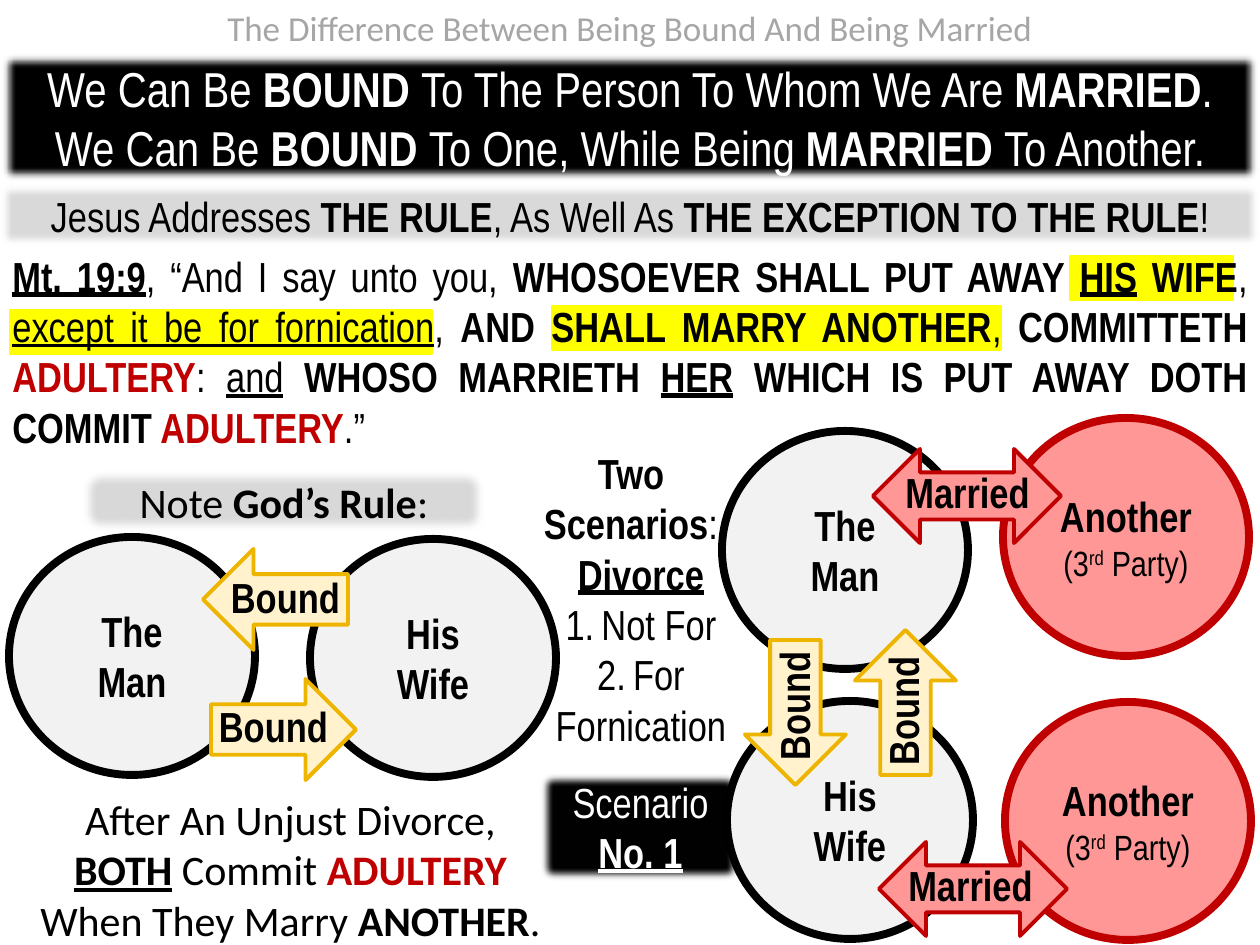
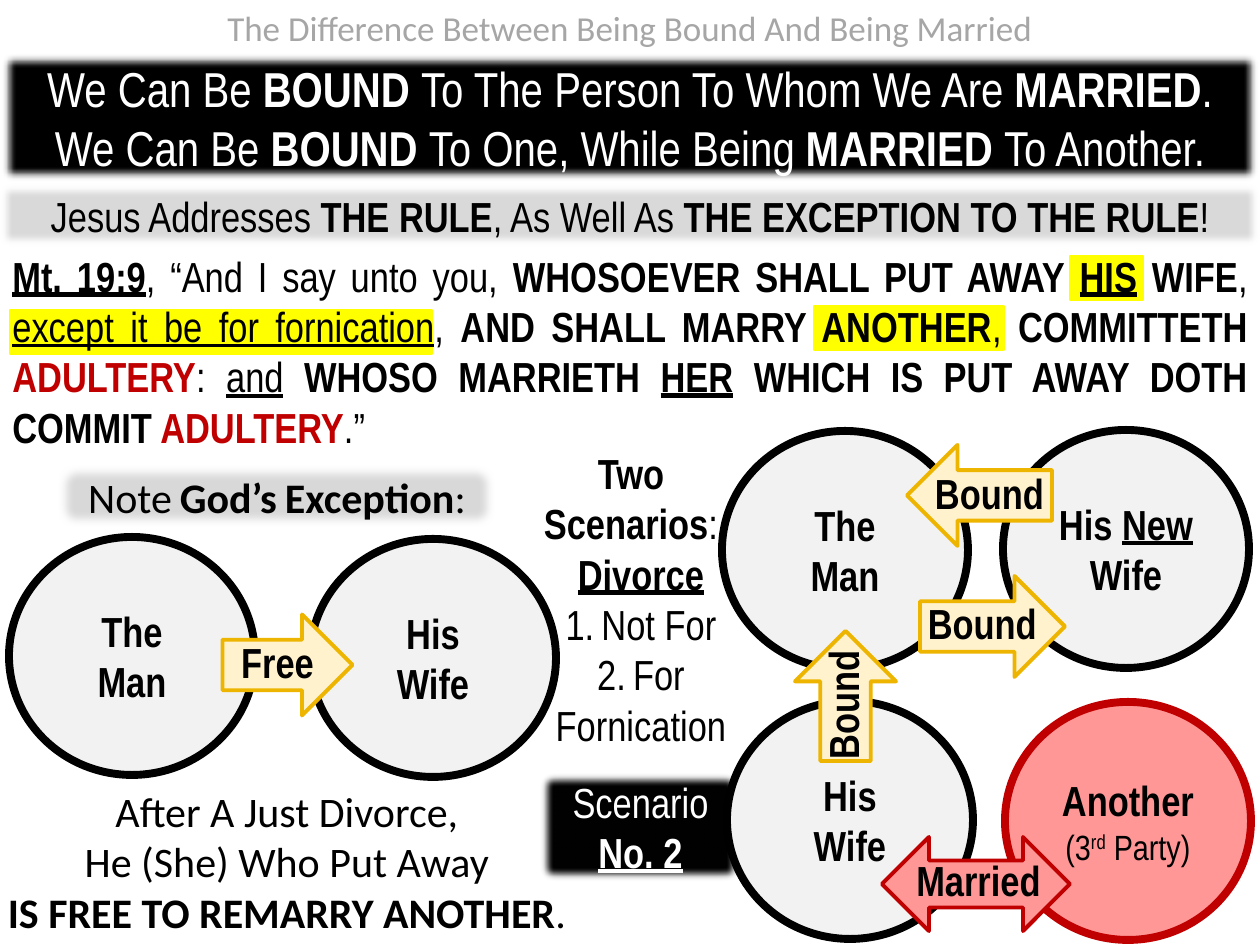
"""Builds two slides on being bound and being married."""
from itertools import groupby

from lxml import etree
from pptx import Presentation
from pptx import util as u
from pptx.dml.color import RGBColor
from pptx.enum import shapes, text
from pptx.oxml import ns

PX = 914400 // 126
W, H = 1260, 945
NARROW, CALIBRI = "Arial Narrow", "Calibri"
COLOURS = {
    "black": "000000", "white": "FFFFFF", "grey": "A6A6A6", "band": "D9D9D9",
    "circle": "F2F2F2", "pink": "FF9797", "red": "C00000",
    "cream": "FFF2CC", "gold": "EEB500", "yellow": "FFFF00",
}
MARKS = {"*": "bold", "_": "underline", "~": "red", "^": "raised", "`": "small"}
KIND = shapes.MSO_SHAPE
CIRCLE = (246, 238)
MAN, WIFE = "*The\nMan*", "*His\nWife*"
THIRD_PARTY = "*Another*\n`(3^rd^ Party)`"
TURNS = {"down": 0, "left": 90, "up": 180, "right": 270}
LABEL_SHIFTS = {"down": (-2, -6), "left": (10, -2), "up": (-3, 9), "right": (-10, -3)}

TOPIC = "The Difference Between Being Bound And Being Married"
CLAIM = ("We Can Be *BOUND *To The Person To Whom We Are *MARRIED*.\n\n"
         "We Can Be *BOUND *To One, While Being* MARRIED *To Another.")
RULE = "Jesus Addresses *THE RULE*, As Well As *THE EXCEPTION TO THE RULE*!"
VERSE = ("*_Mt. 19:9_*, “And I say unto you, *WHOSOEVER SHALL PUT AWAY _HIS_ WIFE*, "
         "_except it be for fornication_, *AND SHALL MARRY ANOTHER*, "
         "*COMMITTETH ~ADULTERY~*: _and_ *WHOSO MARRIETH _HER_ WHICH IS PUT AWAY "
         "DOTH COMMIT~ ADULTERY~*.”")


def rgb(name):
    """Return the named colour."""
    return RGBColor.from_string(COLOURS[name])


def write(sp, markup, size=24, font=NARROW, colour="black", small=20,
          align="CENTER", anchor="TOP"):
    """Write marked-up text; a blank line starts a new paragraph."""
    tf = sp.text_frame
    tf.word_wrap = True
    tf.vertical_anchor = getattr(text.MSO_ANCHOR, anchor)
    for i, line in enumerate(markup.split("\n\n")):
        p = tf.add_paragraph() if i else tf.paragraphs[0]
        p.alignment = getattr(text.PP_ALIGN, align)
        on = set()
        for key, chars in groupby(line, lambda c: c if c in MARKS or c == "\n" else ""):
            if key in MARKS:
                for _ in chars:
                    on ^= {MARKS[key]}
            elif key:
                p.add_line_break()
            else:
                r = p.add_run()
                r.text = "".join(chars)
                r.font.name = font
                r.font.size = u.Pt(small if "small" in on else size)
                r.font.bold = "bold" in on
                r.font.underline = "underline" in on
                r.font.color.rgb = rgb("red" if "red" in on else colour)
                if "raised" in on:
                    r.font._element.set("baseline", "30000")


def add_text(s, box, markup, **style):
    """Add a text box."""
    sp = s.shapes.add_textbox(*(n * PX for n in box))
    write(sp, markup, **style)
    return sp


def add_shape(s, kind, box, fill=None, line=None, width=0):
    """Add a flat preset shape."""
    sp = s.shapes.add_shape(kind, *(n * PX for n in box))
    sp.shadow.inherit = False
    if fill:
        sp.fill.solid()
        sp.fill.fore_color.rgb = rgb(fill)
    else:
        sp.fill.background()
    if line:
        sp.line.color.rgb = rgb(line)
        sp.line.width = u.Pt(width)
    else:
        sp.line.fill.background()
    return sp


def add_band(s, box, fill, markup, kind=KIND.RECTANGLE, **style):
    """Add a filled band with soft edges."""
    sp = add_shape(s, kind, box, fill)
    effects = sp._element.spPr.find(ns.qn("a:effectLst"))
    etree.SubElement(effects, ns.qn("a:softEdge"), rad="63500")
    write(sp, markup, **style)


def add_circle(s, x, y, markup, fill="circle", line="black"):
    """Add one person's circle."""
    sp = add_shape(s, KIND.OVAL, (x, y, *CIRCLE), fill, line, 4.5)
    write(sp, markup, anchor="MIDDLE")


def add_label(s, cx, cy, word, width, turn=0):
    """Add a bold arrow label centred on a point."""
    sp = add_text(s, (cx - width // 2, cy - 32, width, 63), f"*{word}*")
    sp.rotation = turn


def add_bond(s, cx, cy, way, word="Bound", length=145, width=343):
    """Add a one-way arrow and its label around a centre."""
    sp = add_shape(s, KIND.DOWN_ARROW, (cx - 50, cy - length // 2, 101, length),
                   "cream", "gold", 2.25)
    sp.rotation = TURNS[way]
    dx, dy = LABEL_SHIFTS[way]
    add_label(s, cx + dx, cy + dy, word, width, 270 if way in ("up", "down") else 0)


def add_marriage(s, cx, cy, dx=0):
    """Add a two-way arrow and its label around a centre."""
    sp = add_shape(s, KIND.UP_DOWN_ARROW, (cx - 47, cy - 94, 94, 188),
                   "pink", "red", 2.25)
    sp.rotation = 90
    add_label(s, cx + dx, cy - 4, "Married", 195)


def add_header(s, highlights):
    """Add the topic, the bands and the highlighted verse."""
    add_text(s, (0, 0, W, 55), TOPIC, size=20, font=CALIBRI, colour="grey")
    add_band(s, (0, 52, W, 131), "black", CLAIM, size=28, colour="white")
    add_band(s, (0, 184, W, 63), "band", RULE)
    for x, y, w in highlights:
        add_shape(s, KIND.RECTANGLE, (x, y, w, 44), "yellow", "yellow", 1)
    add_text(s, (0, 244, W, 217), VERSE, align="JUSTIFY")


def add_scenario(s, number):
    """Add the middle column naming the scenario."""
    add_band(s, (537, 770, 207, 115), "black", f"Scenario\n*_No. {number}_*",
             colour="white")
    add_text(s, (485, 441, 292, 115), "*Two\nScenarios*:")
    add_text(s, (495, 542, 292, 217),
             "*_Divorce_*\n1.` `Not For\n2.` `For\nFornication", small=18)


def add_couple(s, note, note_box, outcome, outcome_box):
    """Add the left couple with its heading and outcome."""
    add_circle(s, 9, 537, MAN)
    add_circle(s, 310, 539, WIFE)
    style = {"font": CALIBRI, "anchor": "MIDDLE"}
    add_band(s, note_box, "band", note, KIND.ROUNDED_RECTANGLE, **style)
    sp = add_shape(s, KIND.ROUNDED_RECTANGLE, outcome_box)
    write(sp, outcome, **style)


def add_divorced(s):
    """Add the right couple and the wife's third party."""
    add_circle(s, 722, 431, MAN)
    add_circle(s, 727, 701, WIFE)
    add_circle(s, 1005, 702, THIRD_PARTY, "pink", "red")


def new_slide(prs, number, highlights):
    """Start a slide with its shared parts."""
    s = prs.slides.add_slide(prs.slide_layouts[6])
    add_header(s, highlights)
    add_scenario(s, number)
    add_divorced(s)
    return s


def rule_slide(prs):
    """Build the slide on the rule."""
    s = new_slide(prs, 1, [(1070, 256, 163), (552, 306, 449), (10, 310, 422)])
    add_couple(s, "Note *God’s Rule*:", (83, 471, 402, 61),
               "After An Unjust Divorce,\n*_BOTH_* Commit *~ADULTERY~*\n"
               "When They Marry* ANOTHER*.", (-69, 779, 719, 180))
    add_circle(s, 1003, 418, THIRD_PARTY, "pink", "red")
    for cx, cy, way in [(905, 702, "up"), (795, 712, "down"),
                        (283, 729, "right"), (275, 599, "left")]:
        add_bond(s, cx, cy, way)
    add_marriage(s, 973, 889, -3)
    add_marriage(s, 967, 496)


def exception_slide(prs):
    """Build the slide on the exception."""
    s = new_slide(prs, 2, [(1070, 256, 73), (814, 306, 190), (10, 310, 422)])
    add_couple(s, "Note` `*God’s` `Exception*:", (59, 466, 436, 61),
               "After A Just Divorce,\nHe (She) Who Put Away\n"
               "*IS FREE TO REMARRY ANOTHER*.", (-24, 771, 622, 180))
    add_circle(s, 1003, 430, "*His _New_\nWife*")
    add_bond(s, 287, 665, "right", "Free", 130, 135)
    add_bond(s, 845, 696, "up", length=130)
    add_bond(s, 992, 626, "right")
    add_bond(s, 979, 495, "left")
    add_marriage(s, 976, 884, 2)


def main():
    """Build and save the presentation."""
    prs = Presentation()
    prs.slide_width, prs.slide_height = u.Inches(10), u.Inches(7.5)
    rule_slide(prs)
    exception_slide(prs)
    prs.save("out.pptx")


if __name__ == "__main__":
    main()
